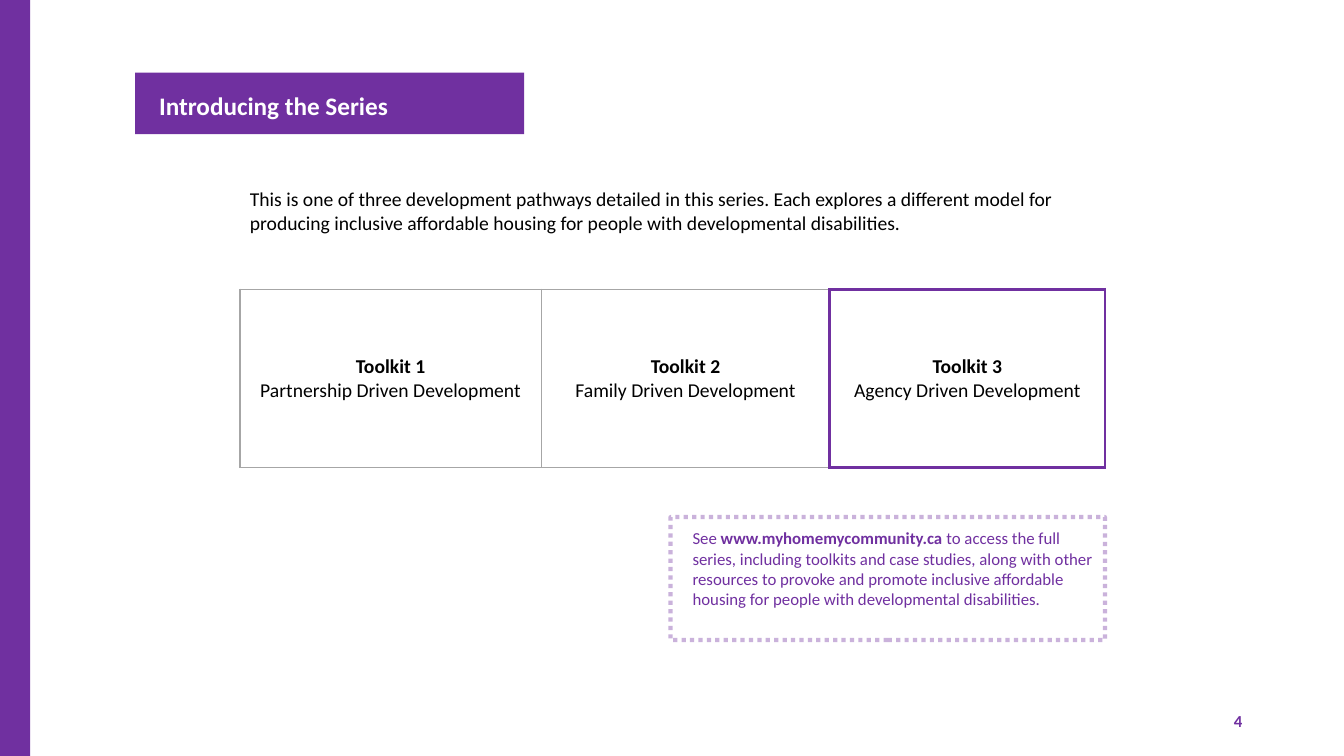
from dataclasses import dataclass

from lxml.etree import SubElement
from pptx import Presentation
from pptx.dml.color import RGBColor
from pptx.enum.dml import MSO_LINE
from pptx.enum.shapes import MSO_SHAPE
from pptx.enum.text import MSO_ANCHOR, PP_ALIGN
from pptx.oxml.ns import qn
from pptx.util import Inches, Pt


@dataclass(frozen=True)
class Theme:
    """Colours, font and type sizes of the slide."""
    font: str = "Calibri"
    purple: str = "7030A0"
    gray: str = "A6A6A6"
    black: str = "000000"
    white: str = "FFFFFF"
    title: int = 18
    body: int = 14
    note: int = 12


class SlideBuilder:
    """Draws styled elements on the current slide."""

    def __init__(self, page, theme):
        """Keep the slide and its style."""
        self.page = page
        self.theme = theme

    def rectangle(self, left, top, width, height):
        """Add a plain purple rectangle."""
        box = self.page.shapes.add_shape(
            MSO_SHAPE.RECTANGLE, Inches(left), Inches(top), Inches(width), Inches(height))
        box.shadow.inherit = False
        box.fill.solid()
        box.fill.fore_color.rgb = RGBColor.from_string(self.theme.purple)
        box.line.fill.background()
        return box

    def dotted_frame(self, left, top, width, height):
        """Add an unfilled frame with a translucent dotted outline."""
        box = self.rectangle(left, top, width, height)
        box.fill.background()
        box.line.color.rgb = RGBColor.from_string(self.theme.purple)
        box.line.width = Pt(3)
        box.line.dash_style = MSO_LINE.ROUND_DOT
        color = box._element.spPr.find(".//" + qn("a:srgbClr"))
        SubElement(color, qn("a:alpha"), val="36000")

    def add_spans(self, para, spans, size, color):
        """Fill a paragraph with (text, bold) runs."""
        for text, bold in spans:
            span = para.add_run()
            span.text = text
            span.font.name = self.theme.font
            span.font.size = Pt(size)
            span.font.bold = bold
            span.font.color.rgb = RGBColor.from_string(color)

    def text(self, left, top, width, height, spans, size, color,
             align=PP_ALIGN.LEFT, anchor=MSO_ANCHOR.TOP):
        """Add a wrapped one-paragraph text box."""
        box = self.page.shapes.add_textbox(
            Inches(left), Inches(top), Inches(width), Inches(height))
        frame = box.text_frame
        frame.word_wrap = True
        frame.vertical_anchor = anchor
        para = frame.paragraphs[0]
        para.alignment = align
        self.add_spans(para, spans, size, color)

    def borders(self, cell, highlighted_sides):
        """Draw the four cell borders, purple on the highlighted sides."""
        properties = cell._tc.get_or_add_tcPr()
        for index, side in enumerate("LRTB"):
            highlighted = side in highlighted_sides
            color = self.theme.purple if highlighted else self.theme.gray
            width = Pt(2.25 if highlighted else 1)
            line = SubElement(properties, qn(f"a:ln{side}"), w=str(int(width)))
            fill = SubElement(line, qn("a:solidFill"))
            SubElement(fill, qn("a:srgbClr"), val=color)
            properties.insert(index, line)

    def toolkit_table(self, left, top, widths, height, toolkits):
        """Add the row of toolkits with the last one highlighted."""
        table = self.page.shapes.add_table(
            1, len(widths), Inches(left), Inches(top),
            Inches(sum(widths)), Inches(height)).table
        table.first_row = False
        table.horz_banding = False
        table.rows[0].height = Inches(height)
        highlights = ("", "R", "LRTB")
        for index, (width, lines) in enumerate(zip(widths, toolkits)):
            table.columns[index].width = Inches(width)
            cell = table.cell(0, index)
            cell.fill.background()
            cell.vertical_anchor = MSO_ANCHOR.MIDDLE
            cell.margin_left = cell.margin_right = Inches(0.07)
            cell.margin_top = cell.margin_bottom = 0
            frame = cell.text_frame
            for number, line in enumerate(lines):
                para = frame.add_paragraph() if number else frame.paragraphs[0]
                para.alignment = PP_ALIGN.CENTER
                self.add_spans(para, [(line, number == 0)], self.theme.body, self.theme.black)
            self.borders(cell, highlights[index])


def main():
    """Build and save the slide."""
    deck = Presentation()
    deck.slide_width, deck.slide_height = Inches(13.33), Inches(7.5)
    page = deck.slides.add_slide(deck.slide_layouts[6])
    theme = Theme()
    builder = SlideBuilder(page, theme)

    builder.rectangle(1.34, 0.72, 3.86, 0.61)
    builder.text(1.48, 0.85, 4.46, 0.71, [("Introducing the Series", True)],
                 theme.title, theme.white)
    builder.rectangle(0, 0, 0.3, 7.5)
    builder.toolkit_table(2.38, 2.87, [2.99, 2.86, 2.73], 1.77, [
        ("Toolkit 1", "Partnership Driven Development"),
        ("Toolkit 2", "Family Driven Development"),
        ("Toolkit 3", "Agency Driven Development"),
    ])
    builder.text(9.42, 6.95, 3, 0.4, [("4", True)], theme.note, theme.purple,
                 PP_ALIGN.RIGHT, MSO_ANCHOR.MIDDLE)
    builder.text(2.38, 1.81, 8.58, 0.81, [(
        "This is one of three development pathways detailed in this series. "
        "Each explores a different model for producing inclusive affordable "
        "housing for people with developmental disabilities.", False)],
        theme.body, theme.black)
    builder.text(6.77, 5.19, 4.19, 1.11, [
        ("See ", False),
        ("www.myhomemycommunity.ca", True),
        (" to access the full series, including toolkits and case studies, "
         "along with other resources to provoke and promote inclusive "
         "affordable housing for people with developmental disabilities.", False)],
        theme.note, theme.purple)
    builder.dotted_frame(6.65, 5.13, 4.31, 1.22)
    deck.save("out.pptx")


if __name__ == "__main__":
    main()
